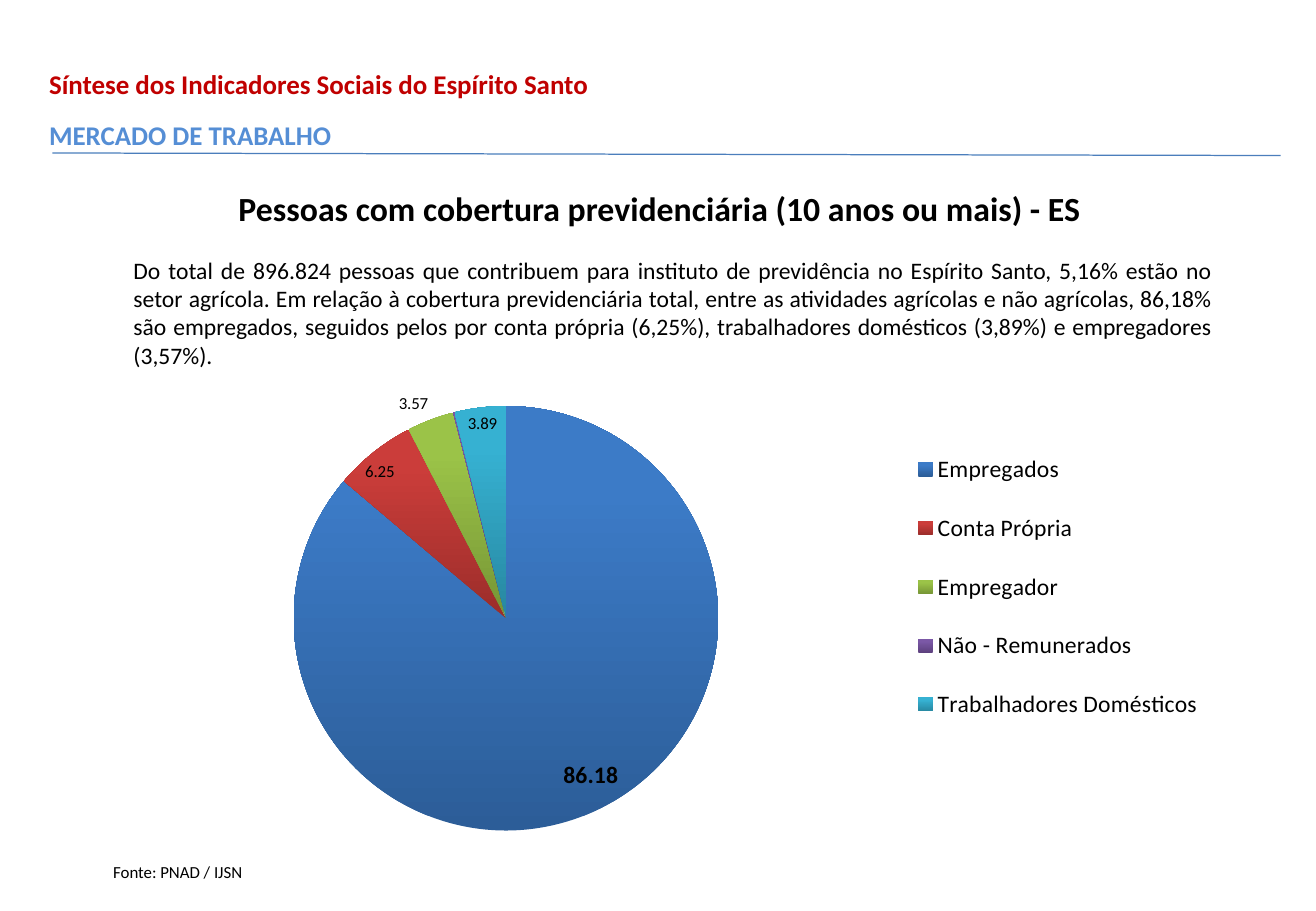
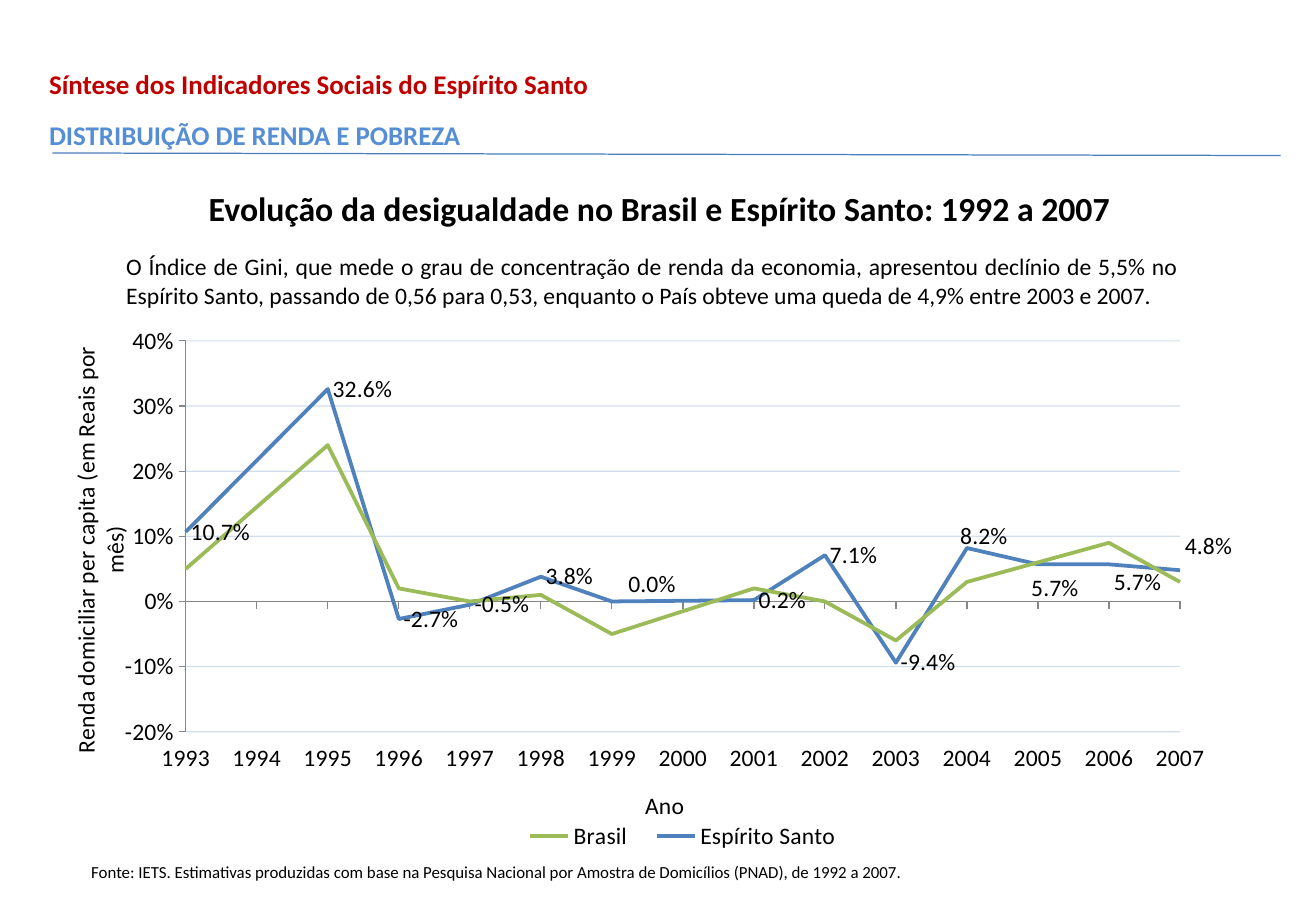
from dataclasses import dataclass
from typing import Optional

from pptx import Presentation
from pptx.chart.data import CategoryChartData, XyChartData
from pptx.dml.color import RGBColor
from pptx.enum.chart import (XL_CHART_TYPE, XL_LABEL_POSITION, XL_LEGEND_POSITION,
                             XL_MARKER_STYLE, XL_TICK_LABEL_POSITION, XL_TICK_MARK)
from pptx.enum.shapes import MSO_CONNECTOR
from pptx.enum.text import PP_ALIGN
from pptx.oxml import parse_xml
from pptx.oxml.ns import nsdecls, qn
from pptx.util import Pt

FONT = "Calibri"
BLACK, RED, BLUE, RULE, GRAY = "000000", "C00000", "558ED5", "4B7EBC", "878787"


@dataclass
class Box:
    left: float
    top: float
    width: float
    height: float

    def emu(self) -> tuple:
        return Pt(self.left), Pt(self.top), Pt(self.width), Pt(self.height)


@dataclass
class Line:
    text: str
    size: float
    color: str = BLACK
    bold: bool = False
    align: PP_ALIGN = PP_ALIGN.LEFT
    before: float = 0


@dataclass
class Slice:
    name: str
    value: float
    dark: str
    light: str
    spot: Optional[XL_LABEL_POSITION] = None


@dataclass
class Curve:
    name: str
    color: str
    values: list


def rgb(code: str) -> RGBColor:
    return RGBColor.from_string(code)


def style(font, size: float, color: str = BLACK, bold: bool = False) -> None:
    font.name, font.size, font.bold = FONT, Pt(size), bold
    font.color.rgb = rgb(color)


# Text and page frame
def fill_text(frame, *lines: Line) -> None:
    for i, line in enumerate(lines):
        para = frame.add_paragraph() if i else frame.paragraphs[0]
        para.text, para.alignment = line.text, line.align
        if line.before:
            para.space_before = Pt(line.before)
        style(para.font, line.size, line.color, line.bold)


def write(slide, box: Box, *lines: Line, wrap: bool = True) -> None:
    frame = slide.shapes.add_textbox(*box.emu()).text_frame
    frame.word_wrap = wrap
    fill_text(frame, *lines)


def page(deck, topic: str, title: str, body: str, area: Box, source: str, edge: float):
    slide = deck.slides.add_slide(deck.slide_layouts[6])
    write(slide, Box(22, 36.7, 757, 81),
          Line("Síntese dos Indicadores Sociais do Espírito Santo", 16, RED, True),
          Line(topic, 16, BLUE, True, before=11))
    rule = slide.shapes.add_connector(MSO_CONNECTOR.STRAIGHT,
                                      Pt(31), Pt(90.7), Pt(759), Pt(92.2))
    rule.line.color.rgb, rule.line.width = rgb(RULE), Pt(0.75)
    effects = parse_xml(f"<a:effectLst {nsdecls('a')}/>")
    rule.element.find(qn("p:spPr")).append(effects)
    write(slide, Box(15, 107.5, 752, 31), Line(title, 20, bold=True, align=PP_ALIGN.CENTER))
    write(slide, area, Line(body, 14, align=PP_ALIGN.JUSTIFY))
    write(slide, Box(edge, 507, 500, 19.4), Line(source, 10), wrap=False)
    return slide


# Chart helpers
def layout(x: float, y: float, w: float = 0, h: float = 0, inner: bool = False):
    parts = [("layoutTarget", "inner")] if inner else []
    if w:
        parts += [("xMode", "edge"), ("yMode", "edge")]
    parts += [("x", x), ("y", y)]
    if w:
        parts += [("w", w), ("h", h)]
    tags = "".join(f'<c:{tag} val="{val}"/>' for tag, val in parts)
    return parse_xml(f"<c:layout {nsdecls('c')}><c:manualLayout>{tags}"
                     "</c:manualLayout></c:layout>")


def fix(node, item, index: int) -> None:
    for old in node.findall(qn("c:layout")):
        node.remove(old)
    node.insert(index, item)


def chart_on(slide, kind, box: Box, data, size: float, side, plot: tuple, legend: tuple):
    chart = slide.shapes.add_chart(kind, *box.emu(), data).chart
    style(chart.font, size)
    chart.has_title = False
    chart.has_legend = True
    chart.legend.position, chart.legend.include_in_layout = side, False
    style(chart.legend.font, 14)
    fix(next(chart.element.iter(qn("c:plotArea"))), layout(*plot, inner=True), 0)
    fix(next(chart.element.iter(qn("c:legend"))), layout(*legend), 1)
    return chart


def tune_labels(chart, code: str, shifts: dict) -> None:
    for node in chart.element.iter(qn("c:dLbl")):
        node.insert(1, parse_xml(f'<c:numFmt {nsdecls("c")} formatCode="{code}" '
                                 'sourceLinked="0"/>'))
        index = int(node.find(qn("c:idx")).get("val"))
        if index in shifts:
            fix(node, layout(*shifts[index]), 1)
    for node in chart.element.iter(qn("c:showLeaderLines")):
        node.set("val", "0")


def draw_pie(slide, slices: list, shifts: dict) -> None:
    data = CategoryChartData(number_format="0.00")
    data.categories = [s.name for s in slices]
    data.add_series("Series 1", [s.value for s in slices])
    chart = chart_on(slide, XL_CHART_TYPE.PIE, Box(0, 215, 779, 286), data, 10,
                     XL_LEGEND_POSITION.RIGHT,
                     (0.22, 0.09, 0.33, 0.88), (0.69, 0.13, 0.23, 0.67))
    plot = chart.plots[0]
    plot.vary_by_categories = True
    for i, part in enumerate(slices):
        point = plot.series[0].points[i]
        fill = point.format.fill
        fill.gradient()
        fill.gradient_angle = 90
        low, high = fill.gradient_stops
        low.color.rgb, low.position = rgb(part.dark), 0
        high.color.rgb, high.position = rgb(part.light), 0.8
        if part.spot is not None:
            label = point.data_label
            label.position = part.spot
            style(label.font, 10 if i else 14, bold=not i)
    tune_labels(chart, "0.00", shifts)


def set_axis(axis, low: float, high: float, step: float, code: str, *title: str) -> None:
    axis.minimum_scale, axis.maximum_scale, axis.major_unit = low, high, step
    axis.major_tick_mark, axis.minor_tick_mark = XL_TICK_MARK.OUTSIDE, XL_TICK_MARK.NONE
    axis.tick_labels.number_format = code
    axis.tick_labels.number_format_is_linked = False
    axis.tick_label_position = XL_TICK_LABEL_POSITION.LOW
    style(axis.tick_labels.font, 14)
    axis.format.line.color.rgb, axis.format.line.width = rgb(GRAY), Pt(0.75)
    fill_text(axis.axis_title.text_frame,
              *[Line(part, 14, align=PP_ALIGN.CENTER) for part in title])


def draw_lines(slide, years: list, curves: list, shifts: dict) -> None:
    data = XyChartData(number_format="0.0%")
    for curve in curves:
        series = data.add_series(curve.name)
        for year, value in zip(years, curve.values):
            series.add_data_point(year, value)
    chart = chart_on(slide, XL_CHART_TYPE.XY_SCATTER_LINES_NO_MARKERS,
                     Box(39, 171, 691.5, 349), data, 14, XL_LEGEND_POSITION.BOTTOM,
                     (0.103, 0.089, 0.854, 0.664), (0.38, 0.9, 0.3, 0.06))
    plot = chart.plots[0]
    plot.vary_by_categories = False

    # Axes and grid
    across, up = chart.category_axis, chart.value_axis
    set_axis(across, years[0], years[-1], 1, "0", "Ano")
    set_axis(up, -0.2, 0.4, 0.1, "0%", "Renda domiciliar per capita (em Reais por", "mês)")
    next(up.axis_title._element.iter(qn("a:bodyPr"))).set("rot", "-5400000")
    across.has_major_gridlines = False
    up.has_major_gridlines = True
    grid = up.major_gridlines.format.line
    grid.color.rgb, grid.width = rgb("4F81BD"), Pt(0.75)
    tint = next(up.major_gridlines._xAx.iter(qn("a:srgbClr")))
    tint.append(parse_xml(f'<a:alpha {nsdecls("a")} val="25000"/>'))

    # Curves and the labels of the last one
    for series, curve in zip(plot.series, curves):
        series.marker.style = XL_MARKER_STYLE.NONE
        series.format.line.color.rgb = rgb(curve.color)
        series.format.line.width = Pt(2.25)
    for i in range(len(years)):
        label = series.points[i].data_label
        label.position = XL_LABEL_POSITION.RIGHT
        style(label.font, 14)
    tune_labels(chart, "0.0%", shifts)


def main() -> None:
    deck = Presentation()
    deck.slide_width, deck.slide_height = Pt(780), Pt(540)

    # Social security cover
    work = page(
        deck, "MERCADO DE TRABALHO",
        "Pessoas com cobertura previdenciária (10 anos ou mais) - ES",
        "Do total de 896.824 pessoas que contribuem para instituto de previdência no "
        "Espírito Santo, 5,16% estão no setor agrícola. Em relação à cobertura "
        "previdenciária total, entre as atividades agrícolas e não agrícolas, 86,18% são "
        "empregados, seguidos pelos por conta própria (6,25%), trabalhadores domésticos "
        "(3,89%) e empregadores (3,57%).",
        Box(72, 148, 654, 75), "Fonte: PNAD / IJSN", 60)
    inside, outside = XL_LABEL_POSITION.INSIDE_END, XL_LABEL_POSITION.OUTSIDE_END
    draw_pie(work, [
        Slice("Empregados", 86.18, "2C5D98", "3C7BC7", inside),
        Slice("Conta Própria", 6.25, "9B2D2A", "CB3D3A", inside),
        Slice("Empregador", 3.57, "769535", "9BC348", outside),
        Slice("Não - Remunerados", 0.1, "5D417E", "7B58A6"),
        Slice("Trabalhadores Domésticos", 3.89, "2787A0", "36B1D2", inside),
    ], {0: (0.02, -0.03), 1: (-0.01, 0.01), 4: (-0.01, 0)})

    # Income inequality
    income = page(
        deck, "DISTRIBUIÇÃO DE RENDA E POBREZA",
        "Evolução da desigualdade no Brasil e Espírito Santo: 1992 a 2007",
        "O Índice de Gini, que mede o grau de concentração de renda da economia, apresentou "
        "declínio de 5,5% no Espírito Santo, passando de 0,56 para 0,53, enquanto o País "
        "obteve uma queda de 4,9% entre 2003 e 2007.",
        Box(67.7, 146, 638, 41),
        "Fonte: IETS. Estimativas produzidas com base na Pesquisa Nacional por Amostra de "
        "Domicílios (PNAD), de 1992 a 2007.", 47)
    years = [y for y in range(1993, 2008) if y not in (1994, 2000)]
    draw_lines(income, years, [
        Curve("Brasil", "9BBB59", [0.05, 0.24, 0.02, 0, 0.01, -0.05, 0.02,
                                   0, -0.06, 0.03, 0.06, 0.09, 0.03]),
        Curve("Espírito Santo", "4F81BD", [0.107, 0.326, -0.027, -0.005, 0.038, 0, 0.002,
                                           0.071, -0.094, 0.082, 0.057, 0.057, 0.048]),
    ], {5: (0.01, -0.03), 9: (-0.01, -0.02), 10: (-0.01, 0.04),
        11: (0, 0.03), 12: (0, -0.04)})
    deck.save("out.pptx")


if __name__ == "__main__":
    main()
